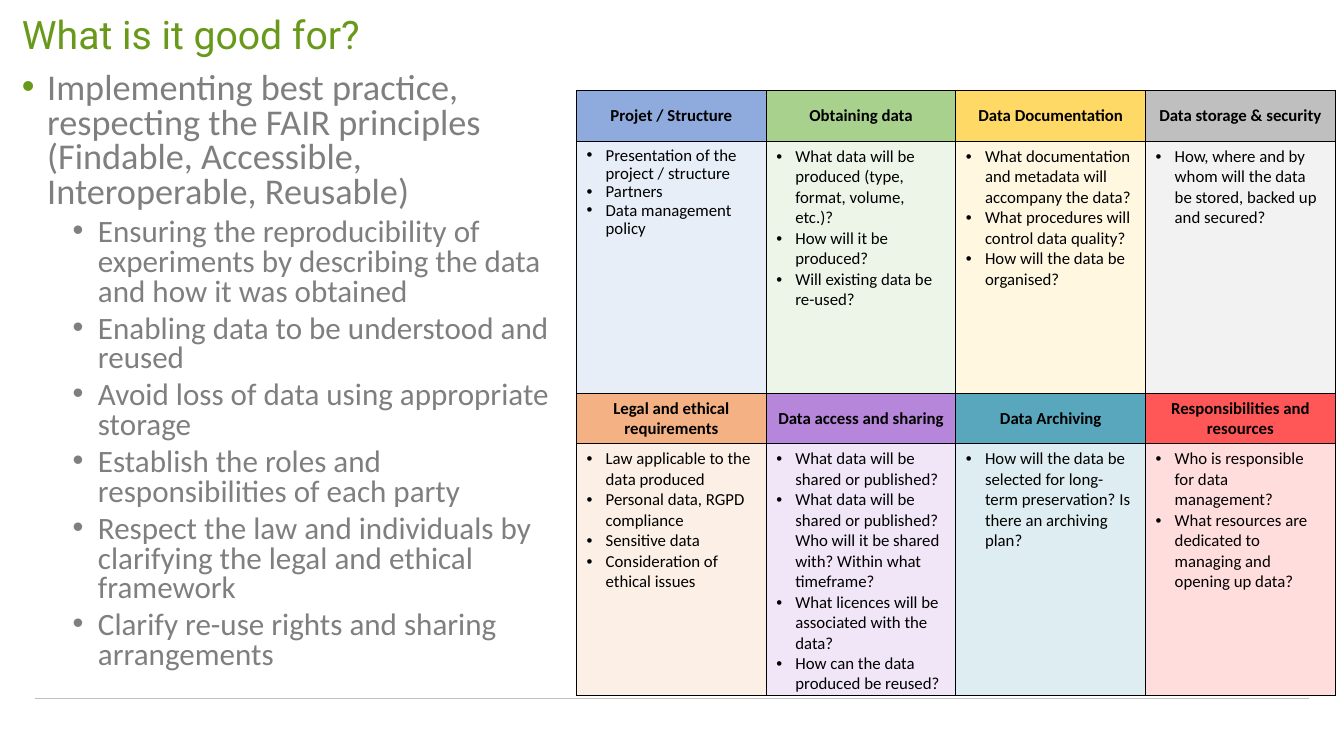
import pptx
import pptx.dml.color
import pptx.enum.shapes
import pptx.enum.text
import pptx.oxml
import pptx.oxml.ns
import pptx.util
from pptx.util import Cm, Pt

TITLE = "What is it good for?"
PRACTICE = ("Implementing best practice, respecting the FAIR principles "
            "(Findable, Accessible, Interoperable, Reusable)")
BENEFITS = [
    "Ensuring the reproducibility of experiments by describing the data and how it was obtained",
    "Enabling data to be understood and reused",
    "Avoid loss of data using appropriate storage",
    "Establish the roles and responsibilities of each party",
    "Respect the law and individuals by clarifying the legal and ethical framework",
    "Clarify re-use rights and sharing arrangements",
]
# Each topic: heading, colour, line spacing, questions
TOPICS = [
    ("Projet / Structure", "8FAADC", 0.9,
     ["Presentation of the project / structure", "Partners", "Data management policy"]),
    ("Obtaining data", "A9D18E", 1.0,
     ["What data will be produced (type, format, volume, etc.)?",
      "How will it be produced?", "Will existing data be re-used?"]),
    ("Data Documentation", "FFD966", 1.0,
     ["What documentation and metadata will accompany the data?",
      "What procedures will control data quality?", "How will the data be organised?"]),
    ("Data storage & security", "BFBFBF", 1.0,
     ["How, where and by whom will the data be stored, backed up and secured?"]),
    ("Legal and ethical requirements", "F4B183", 1.0,
     ["Law applicable to the data produced", "Personal data, RGPD compliance",
      "Sensitive data", "Consideration of ethical issues"]),
    ("Data access and sharing", "B686DA", 1.0,
     ["What data will be shared or published?",
      "What data will be shared or published? Who will it be shared with? "
      "Within what timeframe?",
      "What licences will be associated with the data?",
      "How can the data produced be reused?"]),
    ("Data Archiving", "58A7BC", 1.0,
     ["How will the data be selected for long-term preservation? Is there an archiving plan?"]),
    ("Responsibilities and resources", "FF5757", 1.0,
     ["Who is responsible for data management?",
      "What resources are dedicated to managing and opening up data?"]),
]
COLUMNS = 4
COLUMN_WIDTH = Cm(4.78)
HEADING_HEIGHT, QUESTIONS_HEIGHT = Cm(1.27), Cm(6.35)
GREEN, GREY, BLACK = "69991A", "7F7F7F", "000000"
MIDDLE = pptx.enum.text.MSO_ANCHOR.MIDDLE
ALIGN = pptx.enum.text.PP_ALIGN


def colour(value):
    return pptx.dml.color.RGBColor.from_string(value)


def add_xml(parent, tag, children="", **attributes):
    values = "".join(f' {name}="{value}"' for name, value in attributes.items())
    element = pptx.oxml.parse_xml(
        f'<a:{tag} {pptx.oxml.ns.nsdecls("a")}{values}>{children}</a:{tag}>')
    parent.append(element)


def colour_xml(value):
    return f'<a:srgbClr val="{value}"/>'


def write(paragraph, text, size, text_colour, font="Calibri", bold=False, **layout):
    for name, value in layout.items():
        setattr(paragraph, name, value)
    paragraph.text = text
    formats = {"name": font, "size": Pt(size), "bold": bold}
    for name, value in formats.items():
        setattr(paragraph.runs[0].font, name, value)
    paragraph.runs[0].font.color.rgb = colour(text_colour)


def write_bullets(frame, items):
    """Each item: text, size, colour, margin, hanging, bullet colour, layout."""
    for index, (text, size, text_colour, margin, hanging, bullet, layout) in enumerate(items):
        paragraph = frame.add_paragraph() if index else frame.paragraphs[0]
        write(paragraph, text, size, text_colour, **layout)
        properties = paragraph._p.get_or_add_pPr()
        properties.set("marL", str(margin))
        properties.set("indent", str(-hanging))
        add_xml(properties, "buClr", colour_xml(bullet))
        add_xml(properties, "buFont", typeface="Arial")
        add_xml(properties, "buChar", char="•")


def fill_cell(cell, value, opacity=100):
    properties = cell._tc.get_or_add_tcPr()
    for side in ("lnL", "lnR", "lnT", "lnB"):
        add_xml(properties, side, f"<a:solidFill>{colour_xml(BLACK)}</a:solidFill>",
                w=Pt(0.75))
    cell.fill.solid()
    cell.fill.fore_color.rgb = colour(value)
    if opacity < 100:
        rgb = properties.find(".//a:tcPr/a:solidFill/a:srgbClr", properties.nsmap)
        if rgb is None:
            rgb = properties.find("a:solidFill/a:srgbClr", properties.nsmap)
        add_xml(rgb, "alpha", val=opacity * 1000)


presentation = pptx.Presentation()
presentation.slide_width, presentation.slide_height = Cm(33.87), Cm(19.05)
slide = presentation.slides.add_slide(presentation.slide_layouts[5])

# Footer rule
rule = slide.shapes.add_connector(pptx.enum.shapes.MSO_CONNECTOR.STRAIGHT,
                                  Cm(0.89), Cm(17.6), Cm(32.99), Cm(17.6))
rule.line.color.rgb = colour("BFBFBF")
rule.line.width = Pt(0.75)
add_xml(rule._element.spPr, "effectLst")

# Title
title = slide.shapes.title
title.left, title.top, title.width, title.height = Cm(0.3), Cm(0.38), Cm(32.92), Cm(1.07)
title.text_frame.vertical_anchor = MIDDLE
write(title.text_frame.paragraphs[0], TITLE, 28, GREEN, "Roboto",
      alignment=ALIGN.LEFT, line_spacing=0.9)

# Benefits
benefits = slide.shapes.add_textbox(Cm(0.3), Cm(1.7), Cm(14), Cm(15.47)).text_frame
benefits.word_wrap = True
hanging = Cm(0.64)
items = [(PRACTICE, 25.9, GREY, hanging, hanging, GREEN, {"line_spacing": 0.8})]
items += [(text, 22.2, GREY, 3 * hanging, hanging, GREY,
           {"level": 1, "line_spacing": 0.8, "space_before": Pt(5)}) for text in BENEFITS]
write_bullets(benefits, items)

# Table of topics: a heading row above a question row, twice
row_count = 2 * len(TOPICS) // COLUMNS
table = slide.shapes.add_table(
    row_count, COLUMNS, Cm(14.53), Cm(2.29), COLUMNS * COLUMN_WIDTH,
    row_count // 2 * (HEADING_HEIGHT + QUESTIONS_HEIGHT)).table
table.first_row = table.horz_banding = False
for column in table.columns:
    column.width = COLUMN_WIDTH
for index, row in enumerate(table.rows):
    row.height = QUESTIONS_HEIGHT if index % 2 else HEADING_HEIGHT

for index, (heading, shade, spacing, questions) in enumerate(TOPICS):
    band, column = divmod(index, COLUMNS)
    heading_cell = table.cell(2 * band, column)
    question_cell = table.cell(2 * band + 1, column)
    fill_cell(heading_cell, shade)
    fill_cell(question_cell, shade, opacity=20)
    heading_cell.vertical_anchor = MIDDLE
    write(heading_cell.text_frame.paragraphs[0], heading, 12, BLACK, bold=True,
          alignment=ALIGN.CENTER)
    write_bullets(question_cell.text_frame,
                  [(text, 12, BLACK, Cm(0.48), Cm(0.48), BLACK, {"line_spacing": spacing})
                   for text in questions])

presentation.save("out.pptx")
